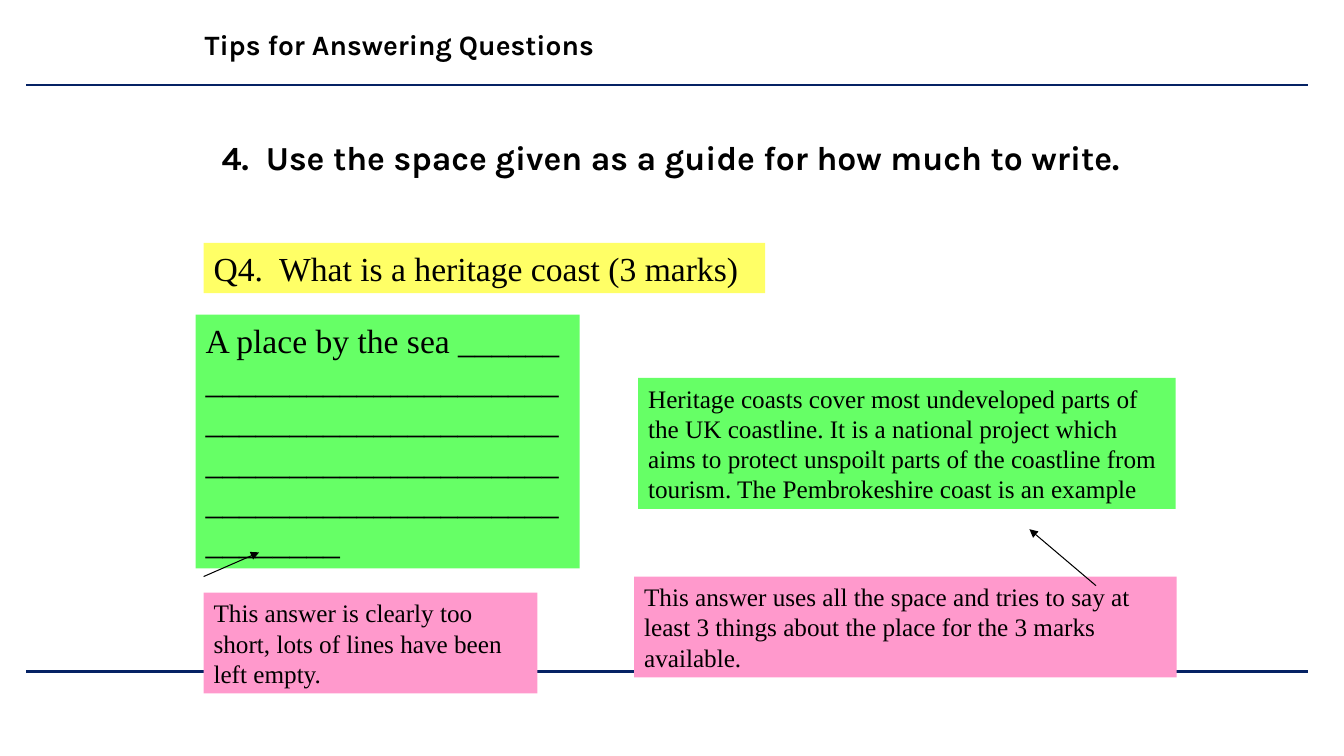
from lxml.etree import SubElement
from pptx import Presentation
from pptx.dml.color import RGBColor
from pptx.enum.shapes import MSO_CONNECTOR, MSO_SHAPE
from pptx.enum.text import MSO_ANCHOR, PP_ALIGN
from pptx.oxml.ns import qn
from pptx.util import Inches, Pt

BLACK, NAVY = "000000", "052264"
QUESTION, ANSWER, COMMENT = "FFFF66", "66FF66", "FF99CC"
HEADING_FONT, BODY_FONT = "Karla", "Times New Roman"


def color(hex_code):
    return RGBColor.from_string(hex_code)


class TipsSlide:
    def __init__(self, presentation):
        self.slide = presentation.slides.add_slide(presentation.slide_layouts[5])
        self.shapes = self.slide.shapes

    def set_text(self, shape, text, size, font, bold=False, anchor=MSO_ANCHOR.TOP):
        frame = shape.text_frame
        frame.word_wrap = True
        frame.vertical_anchor = anchor
        frame.text = text
        paragraph = frame.paragraphs[0]
        paragraph.alignment = PP_ALIGN.LEFT
        paragraph.font.name = font
        paragraph.font.size = Pt(size)
        paragraph.font.bold = bold
        paragraph.font.color.rgb = color(BLACK)

    def title(self, text, left, top, width, height):
        heading = self.shapes.title
        heading.left, heading.top = Inches(left), Inches(top)
        heading.width, heading.height = Inches(width), Inches(height)
        self.set_text(heading, text, 20, HEADING_FONT, True, MSO_ANCHOR.MIDDLE)

    def tip(self, text, left, top, width, height):
        box = self.shapes.add_textbox(
            Inches(left), Inches(top), Inches(width), Inches(height))
        self.set_text(box, text, 24, HEADING_FONT, True)

    def panel(self, text, fill, size, left, top, width, height):
        box = self.shapes.add_shape(
            MSO_SHAPE.RECTANGLE, Inches(left), Inches(top), Inches(width), Inches(height))
        box.shadow.inherit = False
        box.fill.solid()
        box.fill.fore_color.rgb = color(fill)
        box.line.fill.background()
        self.set_text(box, text, size, BODY_FONT)

    def line(self, start, end, stroke, weight):
        connector = self.shapes.add_connector(
            MSO_CONNECTOR.STRAIGHT, *map(Inches, start + end))
        connector.line.color.rgb = color(stroke)
        connector.line.width = Pt(weight)
        SubElement(connector._element.spPr, qn("a:effectLst"))
        return connector

    def arrow(self, start, end):
        connector = self.line(start, end, BLACK, 0.75)
        outline = connector._element.spPr.find(qn("a:ln"))
        SubElement(outline, qn("a:tailEnd"), type="triangle")


def main():
    presentation = Presentation()
    presentation.slide_width = Inches(13.33)
    presentation.slide_height = Inches(7.5)
    tips = TipsSlide(presentation)

    for y, weight in ((0.84, 1.5), (6.66, 1.75)):
        tips.line((0.26, y), (12.97, y), NAVY, weight)

    tips.title("Tips for Answering Questions", 1.93, 0.22, 5.01, 0.44)
    tips.tip("4.  Use the space given as a guide for how much to write.",
             2.1, 1.31, 9.37, 0.91)

    tips.panel("Q4.  What is a heritage coast (3 marks)", QUESTION, 24,
               2.02, 2.41, 5.57, 0.5)
    tips.panel("A place by the sea ______ " + "_" * 92, ANSWER, 24,
               1.94, 3.12, 3.81, 2.52)
    tips.panel("This answer is clearly too short, lots of lines have been left empty.",
               COMMENT, 18, 2.02, 5.88, 3.31, 1)
    tips.panel("Heritage coasts cover most undeveloped parts of the UK coastline. "
               "It is a national project which aims to protect unspoilt parts of the "
               "coastline from tourism. The Pembrokeshire coast is an example",
               ANSWER, 18, 6.33, 3.75, 5.33, 1.3)
    tips.panel("This answer uses all the space and tries to say at least 3 things "
               "about the place for the 3 marks available.",
               COMMENT, 18, 6.29, 5.72, 5.38, 1)

    tips.arrow((10.87, 5.81), (10.21, 5.25))
    tips.arrow((2.02, 5.72), (2.57, 5.48))
    presentation.save("out.pptx")


if __name__ == "__main__":
    main()
